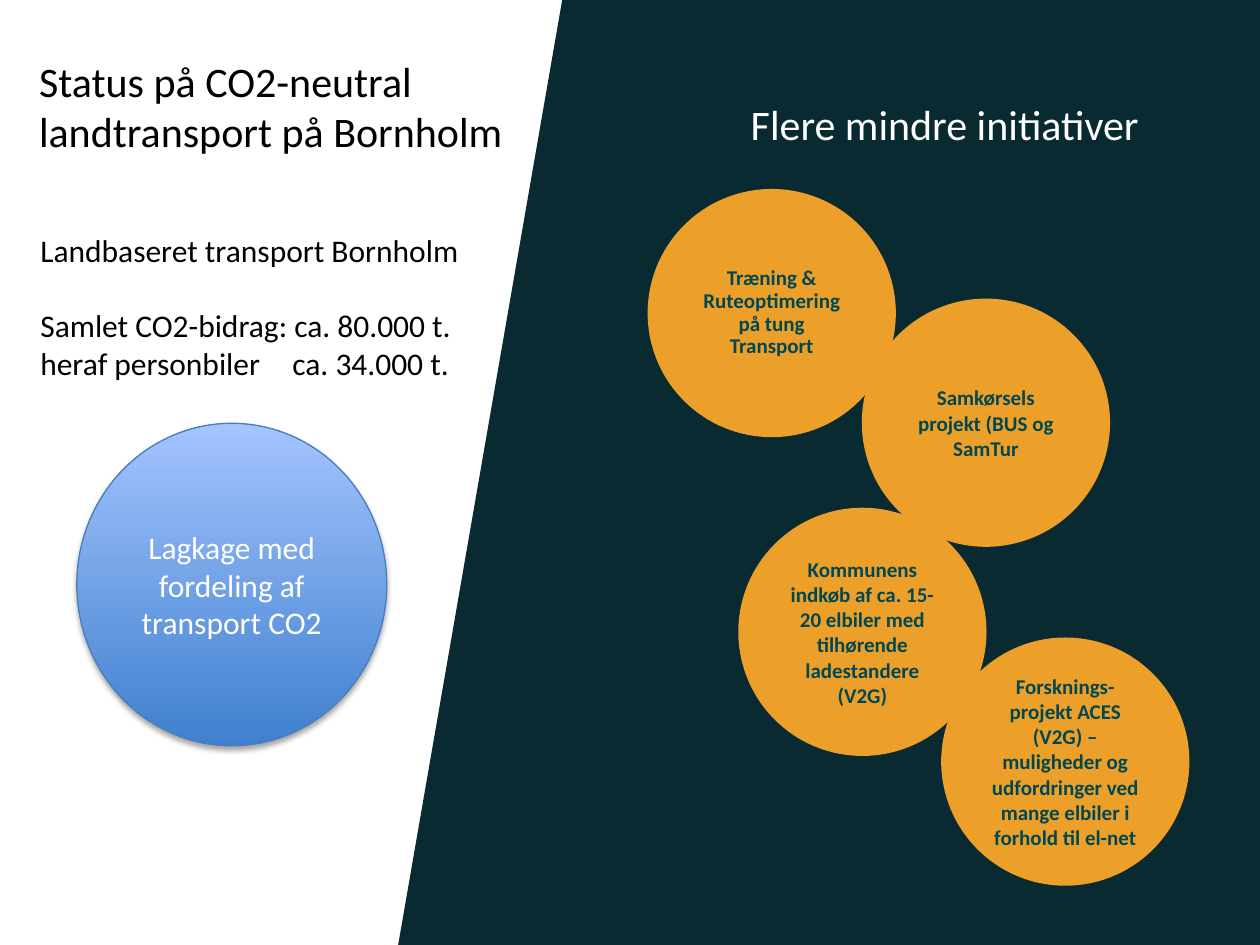
from pptx import Presentation
from pptx.dml.color import RGBColor
from pptx.enum import shapes, text
from pptx.oxml.ns import qn
from pptx.util import Inches, Pt
from lxml import etree

COLORS = {
    "white": "FFFFFF", "black": "000000", "panel": "0A2A31",
    "bubble": "EDA029", "bubble_text": "00474F",
    "cake_low": "3F80CE", "cake_high": "A4C4FF", "cake_line": "4B7EBC",
}
FONT = "Calibri"
BUBBLE_SIZE = 1.97
BUBBLES = [
    (5.14, 1.5, "Træning & Ruteoptimering på tung Transport", 0.9),
    (6.84, 2.37, "Samkørsels projekt (BUS og SamTur", 1),
    (5.86, 4.03, "Kommunens indkøb af ca. 15-20 elbiler med tilhørende "
                 "ladestandere (V2G)", 1),
    (7.47, 5.06, "Forsknings-projekt ACES (V2G) – muligheder og udfordringer "
                 "ved mange elbiler i forhold til el-net", 1),
]


def color(name):
    return RGBColor.from_string(COLORS[name])


def write(para, words, size=18, ink="black", bold=False,
          align=text.PP_ALIGN.LEFT, spacing=1, before=0, after=0):
    para.alignment = align
    para.line_spacing = spacing
    para.space_before = Pt(before)
    para.space_after = Pt(after)
    span = para.add_run()
    span.text = words
    span.font.name = FONT
    span.font.size = Pt(size)
    span.font.bold = bold
    span.font.color.rgb = color(ink)


def place(box, left, top, width, height):
    box.left, box.top = Inches(left), Inches(top)
    box.width, box.height = Inches(width), Inches(height)


def set_frame(box, anchor=text.MSO_ANCHOR.TOP, wrap=True):
    frame = box.text_frame
    frame.auto_size = text.MSO_AUTO_SIZE.NONE
    frame.vertical_anchor = anchor
    frame.word_wrap = wrap
    return frame


def add_filled(page, kind, left, top, width, height, fill, shadow=False):
    box = page.shapes.add_shape(kind, Inches(left), Inches(top),
                                Inches(width), Inches(height))
    if not shadow:
        box.shadow.inherit = False
    box.fill.solid()
    box.fill.fore_color.rgb = color(fill)
    box.line.fill.background()
    return box


def add_backdrop(page, width, height):
    kinds = shapes.MSO_SHAPE
    add_filled(page, kinds.RECTANGLE, 0, 0, 8.73, height, "white", shadow=True)
    slant = add_filled(page, kinds.PARALLELOGRAM, 3.16, 0, 6.61, height, "panel")
    slant.adjustments[0] = 0.197
    add_filled(page, kinds.RECTANGLE, 6.05, 0, width - 6.05, height, "panel")


def bring_to_front(box):
    box.element.getparent().append(box.element)


def fill_title(page, left, top, width, height):
    title = page.shapes.title
    bring_to_front(title)
    place(title, left, top, width, height)
    write(set_frame(title).paragraphs[0],
          "Status på CO2-neutral landtransport på Bornholm", size=24)


def fill_figures(page, left, top, width, height):
    body = page.placeholders[1]
    bring_to_front(body)
    place(body, left, top, width, height)
    frame = set_frame(body)
    lines = [("Landbaseret transport Bornholm", 0),
             ("Samlet CO2-bidrag: ca. 80.000 t.", 21.7),
             ("heraf personbiler\tca. 34.000 t.", 0)]
    for index, (words, before) in enumerate(lines):
        para = frame.paragraphs[0] if index == 0 else frame.add_paragraph()
        props = para._p.get_or_add_pPr()
        props.set("marL", "0")
        props.set("indent", "0")
        etree.SubElement(props, qn("a:buNone"))
        if "\t" in words:
            stops = etree.SubElement(props, qn("a:tabLst"))
            etree.SubElement(stops, qn("a:tab"), pos=str(Inches(1.92)), algn="l")
        write(para, words, before=before)


def add_bubbles(page):
    for left, top, words, spacing in BUBBLES:
        bubble = add_filled(page, shapes.MSO_SHAPE.OVAL, left, top,
                            BUBBLE_SIZE, BUBBLE_SIZE, "bubble")
        frame = set_frame(bubble, text.MSO_ANCHOR.MIDDLE)
        write(frame.paragraphs[0], words, size=12, ink="bubble_text", bold=True,
              align=text.PP_ALIGN.CENTER, spacing=spacing)


def add_heading(page, left, top, width, height):
    box = page.shapes.add_textbox(Inches(left), Inches(top),
                                  Inches(width), Inches(height))
    write(set_frame(box, wrap=False).paragraphs[0],
          "Flere mindre initiativer", size=24, ink="white")


def add_cake(page, left, top, width, height):
    cake = add_filled(page, shapes.MSO_SHAPE.OVAL, left, top, width, height,
                      "cake_low", shadow=True)
    cake.fill.gradient()
    cake.fill.gradient_angle = 90
    for stop, name in zip(cake.fill.gradient_stops, ("cake_low", "cake_high")):
        stop.color.rgb = color(name)
    cake.line.color.rgb = color("cake_line")
    cake.line.width = Pt(0.75)
    frame = set_frame(cake, text.MSO_ANCHOR.MIDDLE)
    write(frame.paragraphs[0], "Lagkage med fordeling af transport CO2",
          ink="white", align=text.PP_ALIGN.CENTER)


def main():
    deck = Presentation()
    deck.slide_width, deck.slide_height = Inches(10), Inches(7.5)
    page = deck.slides.add_slide(deck.slide_layouts[1])
    # Background panels
    add_backdrop(page, 10, 7.5)
    # Left side: title and figures
    fill_title(page, 0.21, 0.39, 3.93, 0.91)
    fill_figures(page, 0.22, 1.78, 3.56, 1.31)
    # Right side: initiatives
    add_bubbles(page)
    add_heading(page, 5.86, 0.73, 3.32, 0.5)
    # Left side: cake circle
    add_cake(page, 0.61, 3.36, 2.46, 2.56)
    deck.save("out.pptx")


if __name__ == "__main__":
    main()
